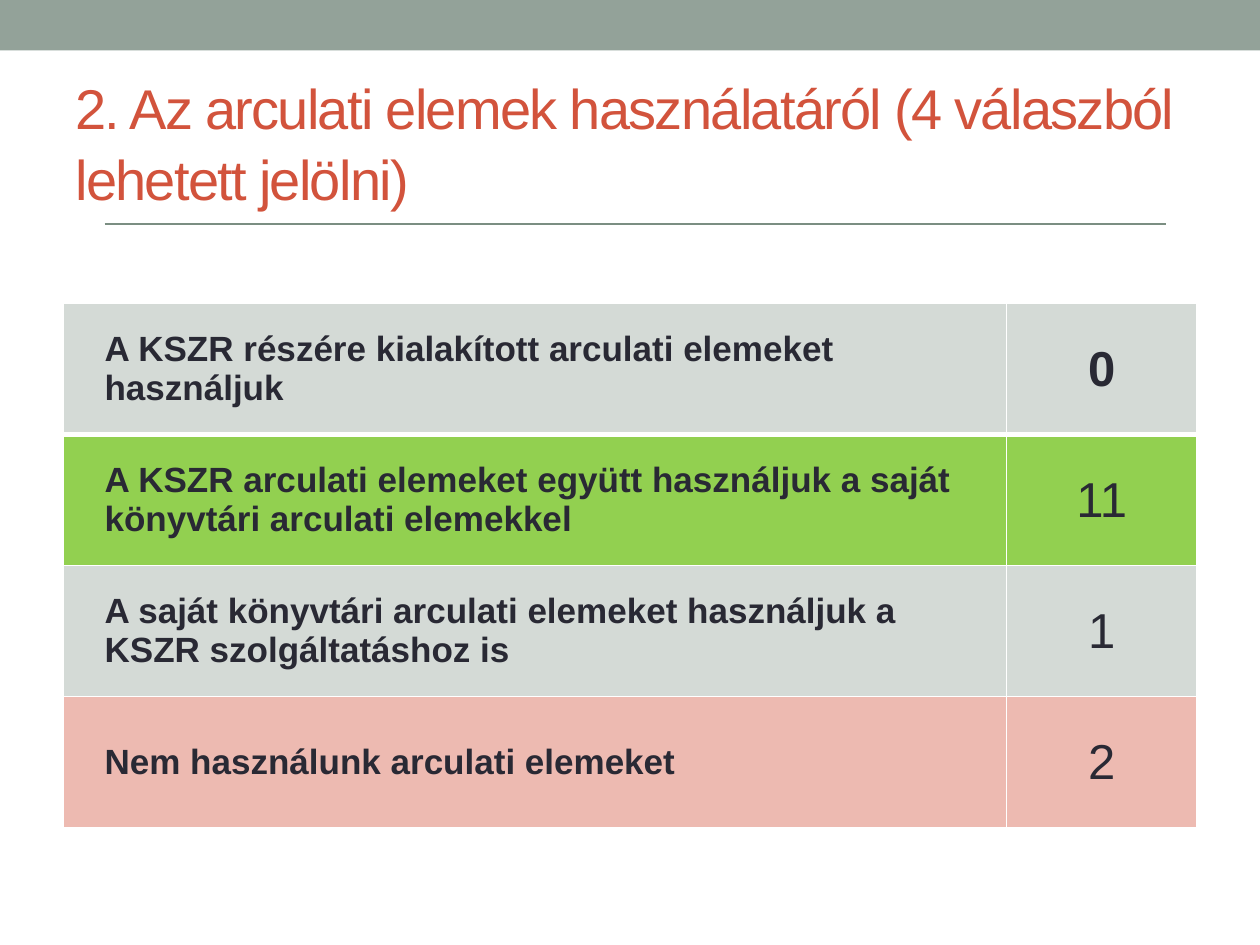
from dataclasses import dataclass

from lxml import etree
from pptx import Presentation
from pptx import util as u
from pptx.dml.color import RGBColor
from pptx.enum import shapes, text
from pptx.oxml import ns


@dataclass(frozen=True)
class Theme:
    font: str = "Arial"
    band: str = "93A299"
    title: str = "D2533C"
    rule: str = "7B8E82"
    ink: str = "292934"
    grid: str = "FFFFFF"
    gray: str = "D4DAD6"
    green: str = "92D050"
    pink: str = "EDBAB1"
    head: int = 32
    label: int = 20
    count: int = 28


THEME = Theme()

# Answer lines, count, count in bold, row colour
ROWS = [
    (["A KSZR részére kialakított arculati elemeket", "használjuk"],
     "0", True, THEME.gray),
    (["A KSZR arculati elemeket együtt használjuk a saját",
      "könyvtári arculati elemekkel"], "11", False, THEME.green),
    (["A saját könyvtári arculati elemeket használjuk a",
      "KSZR szolgáltatáshoz is"], "1", False, THEME.gray),
    (["Nem használunk arculati elemeket"], "2", False, THEME.pink),
]


def paint(fill, color):
    fill.solid()
    fill.fore_color.rgb = RGBColor.from_string(color)


def style(frame, size, color, bold=False, align=text.PP_ALIGN.LEFT):
    for para in frame.paragraphs:
        para.alignment = align
        for run in para.runs:
            run.font.name = THEME.font
            run.font.size = u.Pt(size)
            run.font.bold = bold
            run.font.color.rgb = RGBColor.from_string(color)


def add_band(slide):
    band = slide.shapes.add_shape(shapes.MSO_SHAPE.RECTANGLE,
                                  0, 0, u.Inches(10), u.Inches(0.4))
    band.shadow.inherit = False
    paint(band.fill, THEME.band)
    band.line.fill.background()


def add_title(slide, words):
    box = slide.shapes.add_textbox(u.Inches(0.5), u.Inches(0.58),
                                   u.Inches(9), u.Inches(1.08))
    frame = box.text_frame
    frame.word_wrap = True
    frame.vertical_anchor = text.MSO_ANCHOR.MIDDLE
    frame.text = words
    style(frame, THEME.head, THEME.title)
    para = frame.paragraphs[0]
    para.line_spacing = 1.05
    # Tighten the letters by one point
    para.runs[0].font._element.set("spc", "-100")


def add_rule(slide):
    y = u.Inches(1.78)
    rule = slide.shapes.add_connector(shapes.MSO_CONNECTOR.STRAIGHT,
                                      u.Inches(0.83), y, u.Inches(9.25), y)
    rule.line.color.rgb = RGBColor.from_string(THEME.rule)
    rule.line.width = u.Pt(1)
    etree.SubElement(rule._element.spPr, ns.qn("a:effectLst"))


def set_edges(cell, widths):
    props = cell._tc.get_or_add_tcPr()
    # Edges must come before the fill
    for i, (side, width) in enumerate(widths.items()):
        edge = etree.Element(ns.qn(f"a:ln{side}"), w=str(u.Pt(width)))
        solid = etree.SubElement(edge, ns.qn("a:solidFill"))
        etree.SubElement(solid, ns.qn("a:srgbClr"), val=THEME.grid)
        props.insert(i, edge)


def fill_cell(cell, words, color, widths, **look):
    cell.vertical_anchor = text.MSO_ANCHOR.MIDDLE
    cell.text_frame.text = words
    style(cell.text_frame, color=THEME.ink, **look)
    paint(cell.fill, color)
    set_edges(cell, widths)


def add_grid(slide):
    grid = slide.shapes.add_table(len(ROWS), 2, u.Inches(0.5), u.Inches(2.41),
                                  u.Inches(9), u.Inches(4.16)).table
    grid.first_row = grid.horz_banding = False
    for col, width in zip(grid.columns, (7.49, 1.51)):
        col.width = u.Inches(width)
    for i, (lines, count, bold, color) in enumerate(ROWS):
        grid.rows[i].height = u.Inches(1.04)
        # A thicker line parts the first row from the second
        widths = {"L": 1, "R": 1, "T": 3 if i == 1 else 1,
                  "B": 3 if i == 0 else 1}
        label, value = grid.cell(i, 0), grid.cell(i, 1)
        label.margin_left = u.Inches(0.33)
        fill_cell(label, "\n".join(lines), color, widths, size=THEME.label,
                  bold=True, align=text.PP_ALIGN.JUSTIFY)
        fill_cell(value, count, color, widths, size=THEME.count,
                  bold=bold, align=text.PP_ALIGN.CENTER)


def main():
    deck = Presentation()
    deck.slide_width, deck.slide_height = u.Inches(10), u.Inches(7.5)
    slide = deck.slides.add_slide(deck.slide_layouts[6])
    add_band(slide)
    add_title(slide, "2. Az arculati elemek használatáról "
                     "(4 válaszból lehetett jelölni)")
    add_grid(slide)
    add_rule(slide)
    deck.save("out.pptx")


if __name__ == "__main__":
    main()
